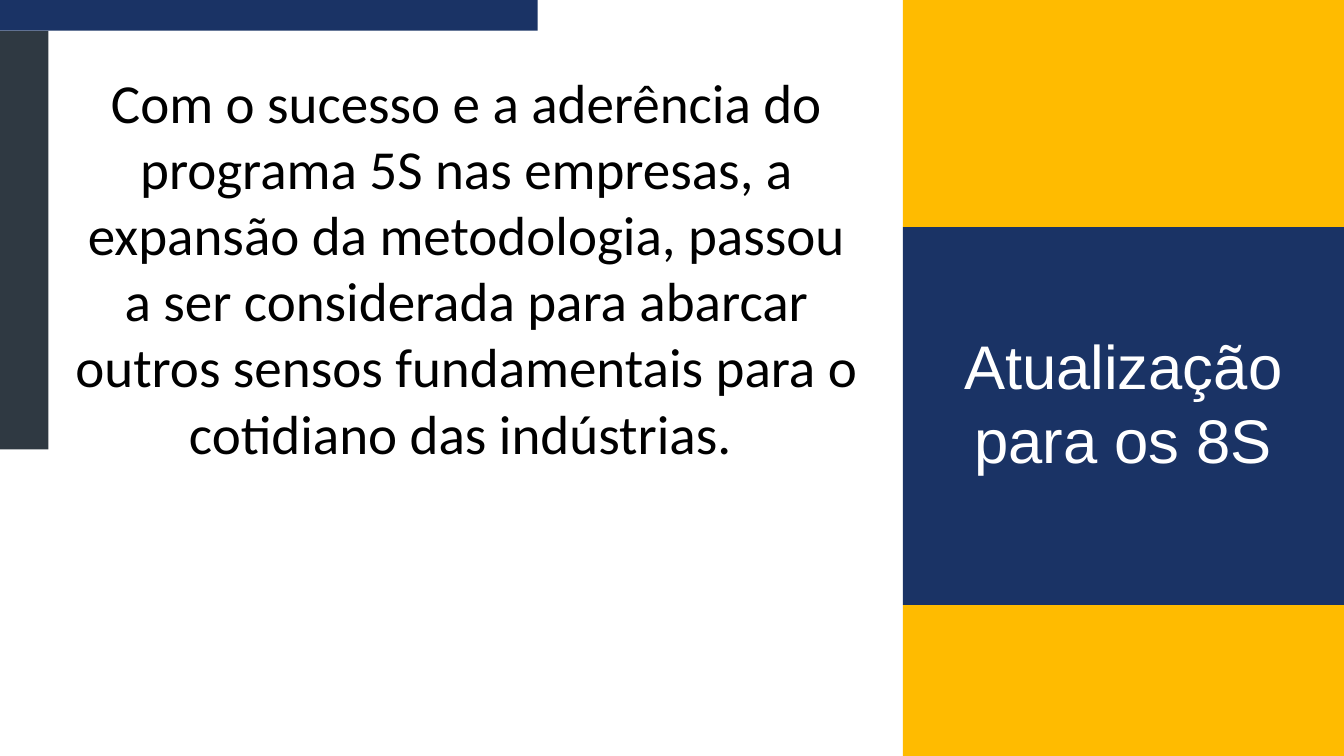
from lxml.etree import SubElement
from pptx import Presentation
from pptx.dml.color import RGBColor
from pptx.enum.shapes import MSO_SHAPE
from pptx.enum.text import MSO_ANCHOR, MSO_AUTO_SIZE, PP_ALIGN
from pptx.oxml.ns import qn
from pptx.util import Pt

NAVY = RGBColor(0x1A, 0x33, 0x65)
GOLD = RGBColor(0xFF, 0xBB, 0x00)
SLATE = RGBColor(0x2F, 0x39, 0x42)
BLACK = RGBColor(0, 0, 0)
WHITE = RGBColor(255, 255, 255)

WIDTH, HEIGHT = 1440, 810
SIDE = 967.5
BAR = 33
TOP, LOW = 243, 648


def place(shape, box):
    shape.left, shape.top, shape.width, shape.height = map(Pt, box)


def add_block(slide, box, color):
    block = slide.shapes.add_shape(MSO_SHAPE.RECTANGLE, *map(Pt, box))
    block.shadow.inherit = False
    block.fill.solid()
    block.fill.fore_color.rgb = color
    block.line.fill.background()


def set_text(slide, holder, box, inset, text, font, size, color):
    place(holder, box)
    slide.shapes.element.append(holder.element)
    frame = holder.text_frame
    frame.word_wrap = True
    frame.auto_size = MSO_AUTO_SIZE.NONE
    frame.vertical_anchor = MSO_ANCHOR.TOP
    frame.margin_left = frame.margin_right = Pt(inset * 2)
    frame.margin_top = frame.margin_bottom = Pt(inset)
    para = frame.paragraphs[0]
    para.alignment = PP_ALIGN.CENTER
    para.line_spacing = 1.0
    para.space_before = para.space_after = Pt(0)
    props = para._p.get_or_add_pPr()
    props.set("marL", "0")
    props.set("indent", "0")
    SubElement(props, qn("a:buNone"))
    run = para.add_run()
    run.text = text
    run.font.name = font
    run.font.size = Pt(size)
    run.font.color.rgb = color


def main():
    deck = Presentation()
    deck.slide_width, deck.slide_height = Pt(WIDTH), Pt(HEIGHT)
    slide = deck.slides.add_slide(deck.slide_layouts[1])
    wide = WIDTH - SIDE

    add_block(slide, (0, BAR, 52, 448.5), SLATE)
    add_block(slide, (0, 0, 576, BAR), NAVY)
    add_block(slide, (SIDE, LOW, wide, HEIGHT - LOW), GOLD)
    add_block(slide, (SIDE, TOP, wide, LOW - TOP), NAVY)
    add_block(slide, (SIDE, 0, wide, TOP), GOLD)

    set_text(slide, slide.placeholders[1], (70.5, 70, 859, 430.5), 3.6,
             "Com o sucesso e a aderência do programa 5S nas empresas, "
             "a expansão da metodologia, passou a ser considerada para "
             "abarcar outros sensos fundamentais para o cotidiano das "
             "indústrias. ", "Calibri", 59, BLACK)
    set_text(slide, slide.shapes.title, (978.5, 351.5, 450, 240), 0,
             "Atualização para os 8S", "Arial", 66, WHITE)

    deck.save("out.pptx")


if __name__ == "__main__":
    main()
